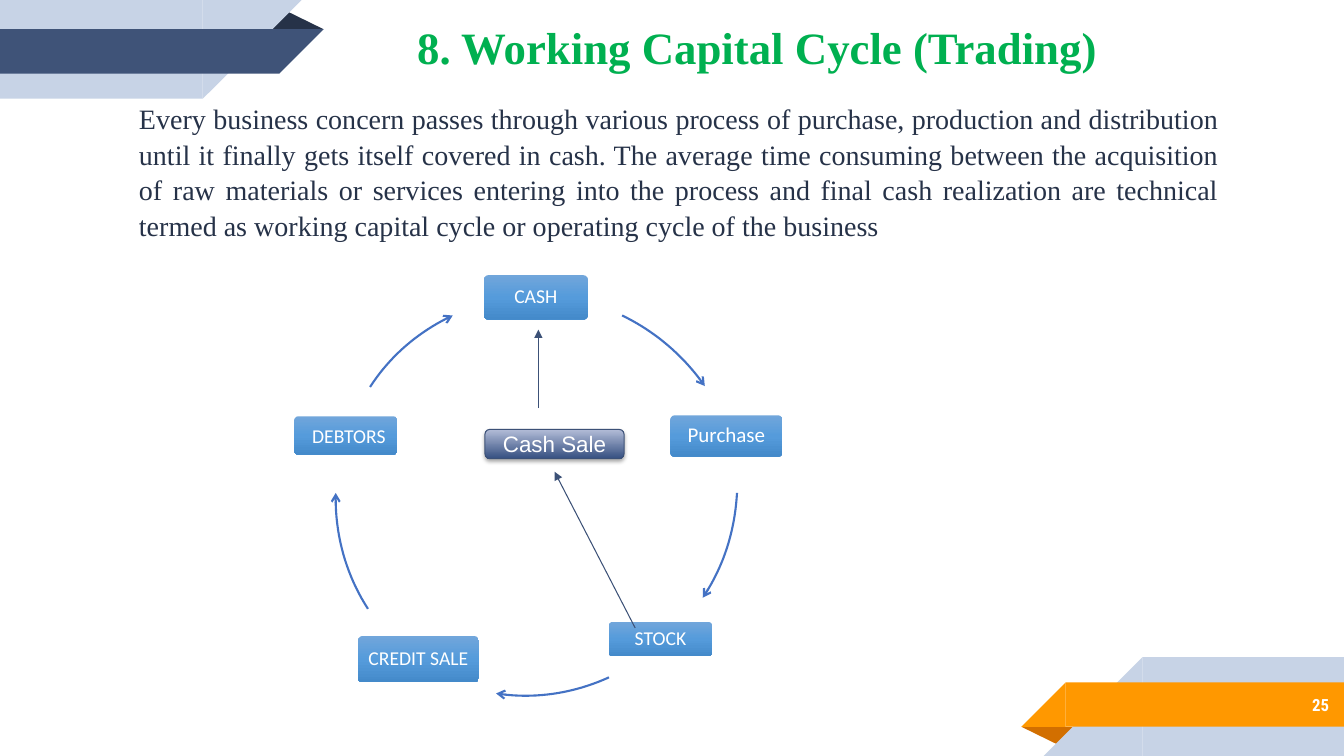
from copy import deepcopy
from lxml.etree import SubElement
from pptx import Presentation
from pptx.dml.color import RGBColor
from pptx.enum.shapes import MSO_CONNECTOR, MSO_SHAPE
from pptx.enum.text import MSO_ANCHOR, PP_ALIGN
from pptx.oxml.ns import qn
from pptx.util import Pt

PX = 9144  # 100 px to the inch
WIDE, HIGH = 1333, 750
rgb = RGBColor.from_string

deck = Presentation()
deck.slide_width, deck.slide_height = WIDE * PX, HIGH * PX
slide = deck.slides.add_slide(deck.slide_layouts[6])
shapes = slide.shapes


def write(shape, text, color, font, para, frame):
    body = shape.text_frame
    line = body.paragraphs[0]
    run = line.add_run()
    run.text = text
    run.font.color.rgb = rgb(color)
    for part, values in ((body, {"word_wrap": True, **frame}), (line, para), (run.font, font)):
        for name, value in values.items():
            setattr(part, name, value)


def add_box(box, stops, round_to=0.1667):
    shape = shapes.add_shape(MSO_SHAPE.ROUNDED_RECTANGLE, *[v * PX for v in box])
    shape.adjustments[0] = round_to
    shape.shadow.inherit = False
    shape.line.fill.background()
    shape.fill.gradient()
    shape.fill.gradient_angle = 270
    ramp = shape._element.spPr.find(".//" + qn("a:gsLst"))
    for _ in stops[2:]:
        ramp.append(deepcopy(ramp[0]))
    for i, (stop, color) in enumerate(zip(shape.fill.gradient_stops, stops)):
        stop.position = i / (len(stops) - 1)
        stop.color.rgb = rgb(color)
    return shape


# Corner ribbons: the lower one is the upper one turned by half a circle
RECT, FOLD, TIP = MSO_SHAPE.RECTANGLE, MSO_SHAPE.ISOSCELES_TRIANGLE, MSO_SHAPE.RIGHT_TRIANGLE
ribbon = [
    (FOLD, (264, 10, 57, 19), "fold"),
    (RECT, (0, 0, 201, 98), "pale"),
    (TIP, (201, 0, 98, 98), "pale"),
    (RECT, (0, 29, 277, 44), "band"),
    (TIP, (277, 29, 44, 44), "band"),
]
upper = {"fold": "263248", "pale": "C7D3E6", "band": "3F5378"}
lower = {"fold": "D26F00", "pale": "C7D3E6", "band": "FF9800"}
for turned, tones in ((False, upper), (True, lower)):
    for kind, (x, y, w, h), tone in ribbon:
        if turned:
            x, y = WIDE + 1 - x - w, HIGH - y - h
        piece = shapes.add_shape(kind, x * PX, y * PX, w * PX, h * PX)
        piece.shadow.inherit = False
        piece.fill.solid()
        piece.fill.fore_color.rgb = rgb(tones[tone])
        piece.line.fill.background()
        if kind == FOLD:
            piece.adjustments[0] = 0.32
            piece.rotation = 180 if turned else 0
        elif kind == TIP:
            piece._element.spPr.xfrm.set("flipH", "1")
            piece.rotation = 0 if turned else 180

# Title, body and page number
serif = "Times New Roman"
middle = {"vertical_anchor": MSO_ANCHOR.MIDDLE}
texts = [
    ((404, 15, 766, 64), "8. Working Capital Cycle (Trading)", "00B050",
     {"name": serif, "size": Pt(32), "bold": True}, {}, {}),
    ((128, 93, 1091, 152),
     "Every business concern passes through various process of purchase, production and "
     "distribution until it finally gets itself covered in cash. The average time consuming "
     "between the acquisition of raw materials or services entering into the process and final "
     "cash realization are technical termed as working capital cycle or operating cycle of the "
     "business", "263248",
     {"name": serif, "size": Pt(20)},
     {"alignment": PP_ALIGN.JUSTIFY, "line_spacing": 1.07, "space_after": Pt(8)}, {}),
    ((1111, 676, 217, 46), "25", "FFFFFF",
     {"name": "Roboto Condensed", "size": Pt(12), "bold": True},
     {"alignment": PP_ALIGN.RIGHT}, middle),
]
for box, *rest in texts:
    write(shapes.add_textbox(*[v * PX for v in box]), *rest)

# Stages of the cycle: box, label, size, extra left and top inset
stages = [
    ((480, 273, 103, 44), "CASH", 14, 0, 0),
    ((665, 412, 111, 41), "Purchase", 15, 0, 0),
    ((604, 617, 102, 34), "STOCK", 14, 0, 0),
    ((355, 631, 120, 46), "CREDIT SALE", 14, 0, 0),
    ((292, 413, 102, 38), "DEBTORS", 14, 6, 4),
]
center = {"alignment": PP_ALIGN.CENTER}
for box, label, size, left, top in stages:
    inset = {"margin_left": (6 + left) * PX, "margin_top": (6 + top) * PX,
             "margin_right": 6 * PX, "margin_bottom": 6 * PX}
    write(add_box(box, ["71A6DB", "559BDB", "448ACA"], 0.1), label, "FFFFFF",
          {"name": "Calibri", "size": Pt(size)}, {**center, "line_spacing": 0.9},
          {**middle, **inset})

# Cash sale in the middle, with a soft shadow
sale = add_box((481, 426, 138, 29), ["B3BDD8", "365081"])
sale.line.color.rgb = rgb("3C5177")
sale.line.width = Pt(0.75)
glow = SubElement(sale._element.spPr.find(qn("a:effectLst")), qn("a:outerShdw"),
                  blurRad="39370", dist="22860", dir="5400000", rotWithShape="0")
shade = SubElement(glow, qn("a:srgbClr"), val="000000")
SubElement(shade, qn("a:alpha"), val="35000")
write(sale, "Cash Sale", "FFFFFF", {"name": "Arial", "size": Pt(16)}, center, middle)

# Curved arrows between stages: start, two handles, end
curves = [
    ((617, 313), (650, 329), (678, 353), (699, 383)),
    ((731, 489), (729, 526), (718, 562), (697, 593)),
    ((604, 672), (569, 688), (530, 694), (492, 688)),
    ((365, 604), (343, 570), (332, 530), (333, 489)),
    ((367, 384), (387, 353), (415, 329), (449, 313)),
]
STEPS = 20
arrows = []
for curve in curves:
    dots = []
    for i in range(STEPS + 1):
        t = i / STEPS
        parts = ((1 - t) ** 3, 3 * t * (1 - t) ** 2, 3 * t * t * (1 - t), t ** 3)
        dots.append([sum(k * dot[axis] for k, dot in zip(parts, curve)) * PX for axis in (0, 1)])
    pen = shapes.build_freeform(*dots[0], scale=1.0)
    pen.add_line_segments(dots[1:], close=False)
    bow = pen.convert_to_shape()
    bow.fill.background()
    bow.shadow.inherit = False
    arrows.append((bow, "4472C4", 1.5, "arrow"))

# Straight arrows by way of the cash sale
for ends in ((630, 623, 550, 468), (534, 405, 534, 327)):
    link = shapes.add_connector(MSO_CONNECTOR.STRAIGHT, *[v * PX for v in ends])
    SubElement(link._element.spPr, qn("a:effectLst"))
    arrows.append((link, "3C5177", 0.75, "triangle"))

for arrow, color, width, head in arrows:
    arrow.line.color.rgb = rgb(color)
    arrow.line.width = Pt(width)
    SubElement(arrow.line._get_or_add_ln(), qn("a:tailEnd"), type=head)

deck.save("out.pptx")
